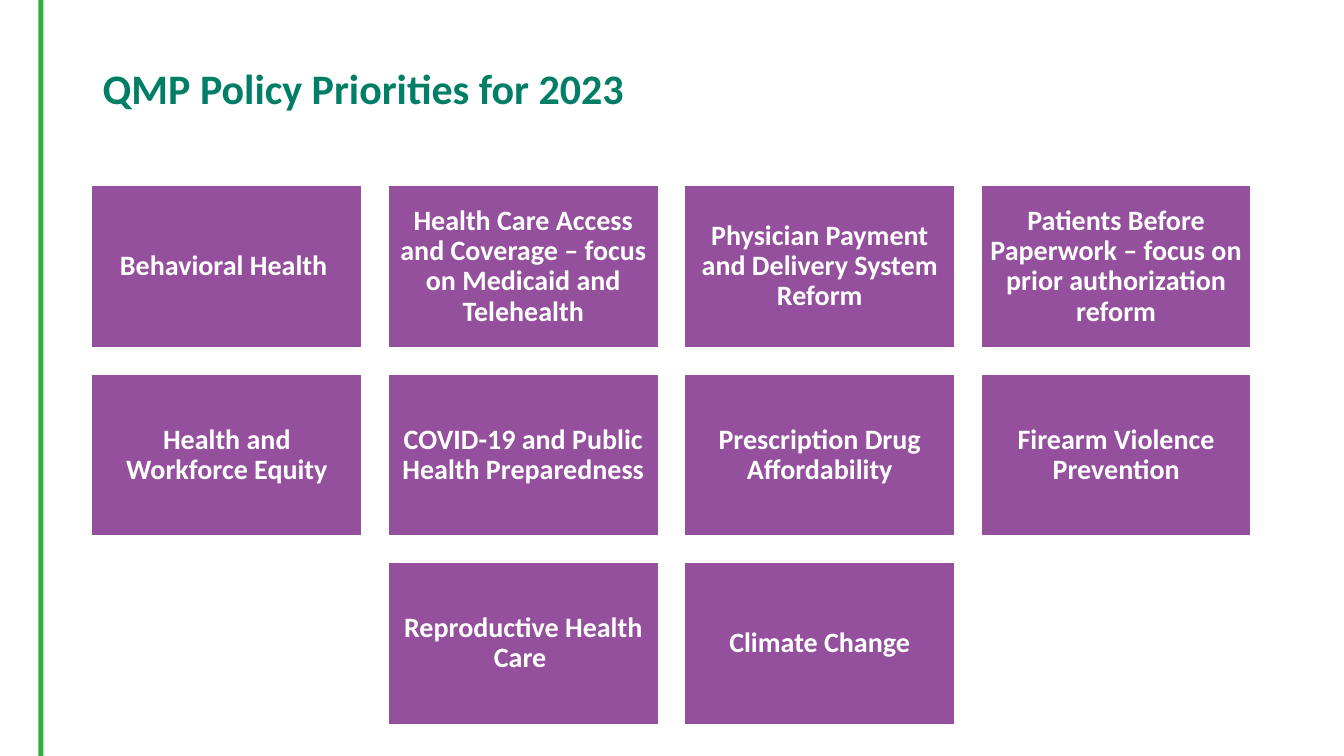
from pptx import Presentation
from pptx.dml.color import RGBColor
from pptx.enum.shapes import MSO_SHAPE
from pptx.enum.text import MSO_ANCHOR, PP_ALIGN
from pptx.util import Pt

EMU_PER_PX = 9144  # 100 px to the inch

GREEN = RGBColor(0x2E, 0xB1, 0x35)
TEAL = RGBColor(0x00, 0x7E, 0x66)
PURPLE = RGBColor(0x95, 0x50, 0x9D)
WHITE = RGBColor(0xFF, 0xFF, 0xFF)

PRIORITY_ROWS = [
    [
        "Behavioral Health ",
        "Health Care Access and Coverage – focus on Medicaid and Telehealth",
        "Physician Payment and Delivery System Reform",
        "Patients Before Paperwork – focus on prior authorization reform",
    ],
    [
        "Health and Workforce Equity",
        "COVID-19 and Public Health Preparedness",
        "Prescription Drug Affordability",
        "Firearm Violence Prevention",
    ],
    ["Reproductive Health Care ", "Climate Change"],
]
COLUMNS = 4
GRID_LEFT, GRID_TOP = 91, 184
CARD_WIDTH, CARD_HEIGHT = 268, 161
COLUMN_STEP, ROW_STEP = 294, 187


def px(*lengths):
    return [length * EMU_PER_PX for length in lengths]


def write_text(shape, text, *, size, color, align=PP_ALIGN.LEFT, inset=(10, 5)):
    """Fill the shape with one bold, vertically centred paragraph."""
    frame = shape.text_frame
    frame.word_wrap = True
    frame.vertical_anchor = MSO_ANCHOR.MIDDLE
    horizontal, vertical = px(*inset)
    frame.margin_left = frame.margin_right = horizontal
    frame.margin_top = frame.margin_bottom = vertical
    paragraph = frame.paragraphs[0]
    paragraph.alignment = align
    paragraph.line_spacing = 0.9
    run = paragraph.add_run()
    run.text = text
    run.font.name = "Calibri"
    run.font.size = Pt(size)
    run.font.bold = True
    run.font.color.rgb = color


def add_rectangle(slide, left, top, width, height, fill, line=None):
    shape = slide.shapes.add_shape(
        MSO_SHAPE.RECTANGLE, *px(left, top, width, height))
    shape.shadow.inherit = False
    shape.fill.solid()
    shape.fill.fore_color.rgb = fill
    if line is None:
        shape.line.fill.background()
    else:
        shape.line.color.rgb = line
        shape.line.width = Pt(1)
    return shape


def add_title(slide, text):
    title = slide.shapes.add_textbox(*px(92, 40, 1150, 100))
    write_text(title, text, size=30, color=TEAL)


def add_priority_grid(slide):
    """Lay out the cards row by row, centring a row that is not full."""
    for row, priorities in enumerate(PRIORITY_ROWS):
        row_left = GRID_LEFT + (COLUMNS - len(priorities)) * COLUMN_STEP // 2
        for column, priority in enumerate(priorities):
            card = add_rectangle(
                slide, row_left + column * COLUMN_STEP, GRID_TOP + row * ROW_STEP,
                CARD_WIDTH, CARD_HEIGHT, PURPLE, line=WHITE)
            write_text(card, priority, size=20, color=WHITE,
                       align=PP_ALIGN.CENTER, inset=(8, 8))


def main():
    presentation = Presentation()
    presentation.slide_width, presentation.slide_height = px(1333, 750)
    slide = presentation.slides.add_slide(presentation.slide_layouts[6])
    add_rectangle(slide, 38, 0, 5, 750, GREEN)
    add_title(slide, "QMP Policy Priorities for 2023")
    add_priority_grid(slide)
    presentation.save("out.pptx")


if __name__ == "__main__":
    main()
